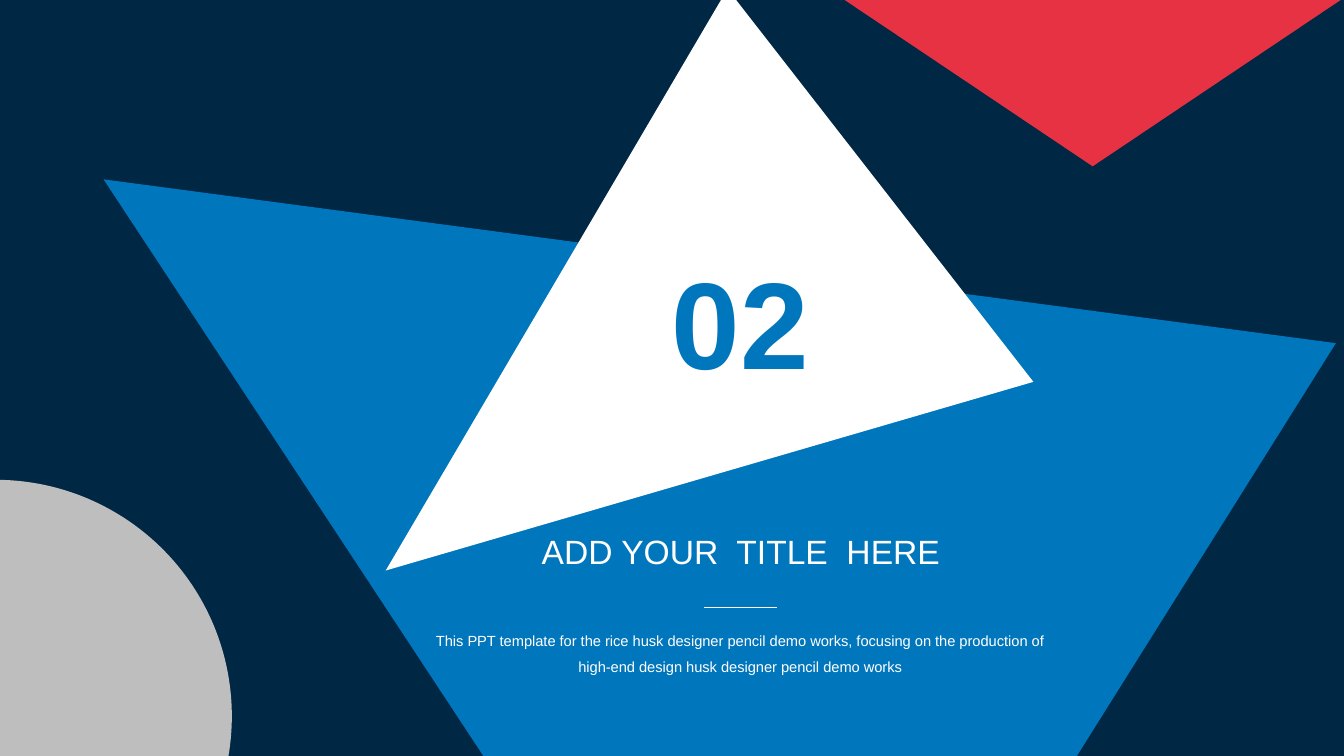
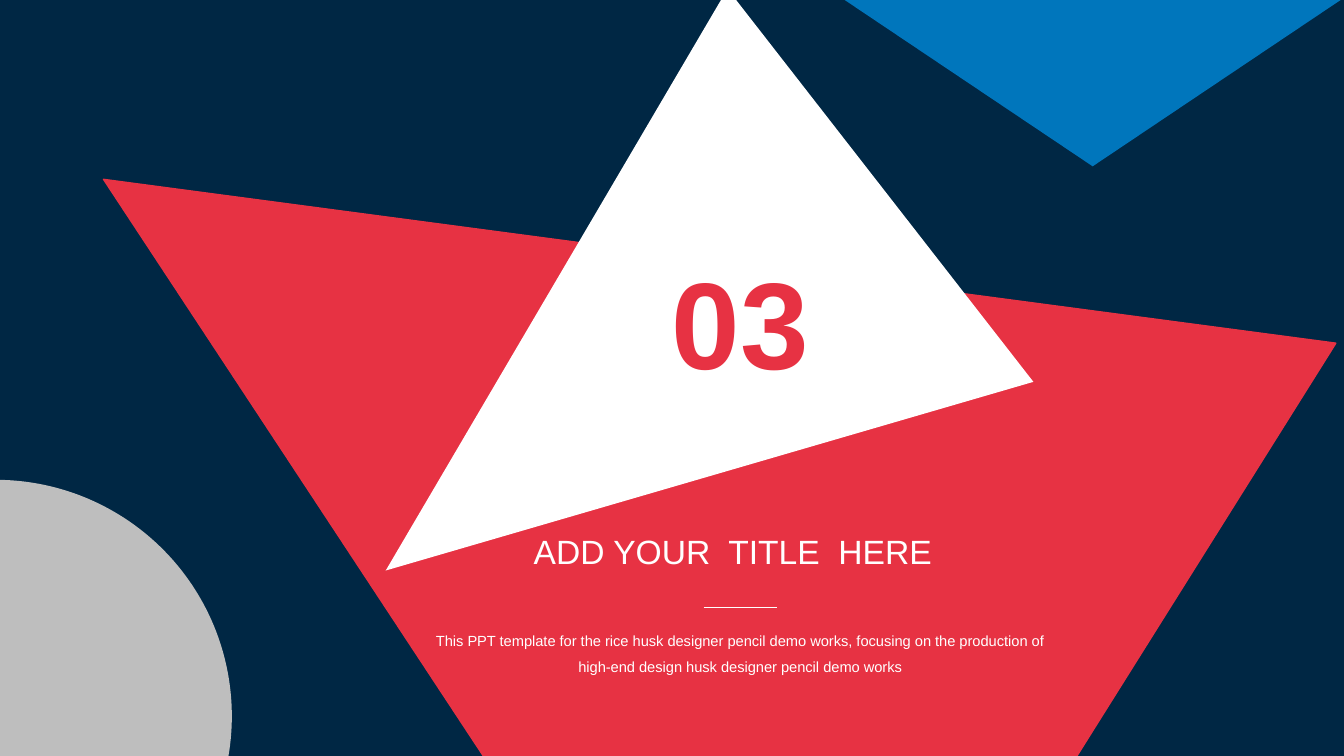
"""Build two section divider slides with a shared arrangement of triangles."""
from dataclasses import dataclass

from lxml.etree import SubElement
from pptx import Presentation
from pptx.dml.color import RGBColor
from pptx.enum.shapes import MSO_CONNECTOR, MSO_SHAPE
from pptx.enum.text import MSO_ANCHOR, MSO_AUTO_SIZE, PP_ALIGN
from pptx.oxml.ns import qn
from pptx.shapes.base import BaseShape
from pptx.slide import Slide
from pptx.util import Inches, Pt

NAVY = RGBColor(0x00, 0x27, 0x44)
BLUE = RGBColor(0x00, 0x76, 0xBC)
RED = RGBColor(0xE7, 0x32, 0x43)
GRAY = RGBColor(0xBE, 0xBE, 0xBE)
WHITE = RGBColor(0xFF, 0xFF, 0xFF)

FONT = "Arial"
SLIDE_WIDTH = Inches(40 / 3)
SLIDE_HEIGHT = Inches(7.5)
SECTION_LAYOUT = 2

TITLE = "ADD YOUR  TITLE  HERE"
DESCRIPTION = (
    "This PPT template for the rice husk designer pencil demo works, "
    "focusing on the production of high-end design husk designer pencil demo works"
)


@dataclass(frozen=True)
class Box:
    """Position and size in percent of the slide's width and height."""

    left: float
    top: float
    width: float
    height: float

    def lengths(self) -> tuple[int, int, int, int]:
        """Return left, top, width and height as slide lengths."""
        return (
            across(self.left),
            down(self.top),
            across(self.width),
            down(self.height),
        )


@dataclass(frozen=True)
class Figure:
    """A flat decorative shape."""

    kind: MSO_SHAPE
    box: Box
    color: RGBColor
    rotation: float = 0
    outline: float = 0


@dataclass(frozen=True)
class TextStyle:
    """Formatting of one centred paragraph."""

    size: float
    color: RGBColor = WHITE
    bold: bool = False
    line_spacing: float = 1.0


@dataclass(frozen=True)
class Section:
    """What differs between the divider slides."""

    number: str
    main_color: RGBColor
    corner_color: RGBColor
    title_left: float
    outline: float = 0


LARGE_TRIANGLE_BOX = Box(4.95, -11.33, 76.8, 149.6)
CORNER_BOX = Box(62.85, 0, 36.9, 22)
DISC_BOX = Box(-17.93, 63.47, 35.18, 62.53)
WHITE_TRIANGLE_BOX = Box(28.58, 8.53, 37.05, 82.93)
NUMBER_BOX = Box(41.25, 31.87, 27.68, 21.07)
DESCRIPTION_BOX = Box(30.9, 81.73, 48.38, 8)
RULE_LEFT, RULE_RIGHT, RULE_TOP = 52.35, 57.83, 80.4

TITLE_STYLE = TextStyle(24)
DESCRIPTION_STYLE = TextStyle(10.5, line_spacing=1.5)

SECTIONS = (
    Section("02", BLUE, RED, title_left=38.7),
    Section("03", RED, BLUE, title_left=38.1, outline=1),
)


def across(percent: float) -> int:
    """Convert a percentage of the slide's width to a length."""
    return round(SLIDE_WIDTH * percent / 100)


def down(percent: float) -> int:
    """Convert a percentage of the slide's height to a length."""
    return round(SLIDE_HEIGHT * percent / 100)


def add_figure(slide: Slide, figure: Figure) -> None:
    """Draw one flat shape."""
    shape = slide.shapes.add_shape(figure.kind, *figure.box.lengths())
    shape.rotation = figure.rotation
    shape.shadow.inherit = False
    shape.fill.solid()
    shape.fill.fore_color.rgb = figure.color
    if figure.outline:
        shape.line.color.rgb = figure.color
        shape.line.width = Pt(figure.outline)
    else:
        shape.line.fill.background()


def add_rule(slide: Slide) -> None:
    """Draw the thin line between title and description."""
    rule = slide.shapes.add_connector(
        MSO_CONNECTOR.STRAIGHT,
        across(RULE_LEFT),
        down(RULE_TOP),
        across(RULE_RIGHT),
        down(RULE_TOP),
    )
    rule.line.color.rgb = WHITE
    rule.line.width = Pt(0.5)
    SubElement(rule.element.spPr, qn("a:effectLst"))


def write_text(shape: BaseShape, box: Box, text: str, style: TextStyle) -> None:
    """Place a text shape and fill it with one centred paragraph."""
    shape.left, shape.top, shape.width, shape.height = box.lengths()
    frame = shape.text_frame
    frame.text = text
    frame.word_wrap = True
    frame.auto_size = MSO_AUTO_SIZE.NONE
    frame.vertical_anchor = MSO_ANCHOR.TOP
    paragraph = frame.paragraphs[0]
    paragraph.alignment = PP_ALIGN.CENTER
    paragraph.line_spacing = style.line_spacing
    paragraph.space_before = Pt(0)
    paragraph.font.name = FONT
    paragraph.font.size = Pt(style.size)
    paragraph.font.bold = style.bold
    paragraph.font.color.rgb = style.color


def add_section_slide(presentation: Presentation, section: Section) -> None:
    """Add one divider slide."""
    slide = presentation.slides.add_slide(presentation.slide_layouts[SECTION_LAYOUT])
    title, description = slide.placeholders
    triangle = MSO_SHAPE.ISOSCELES_TRIANGLE
    figures = (
        Figure(triangle, LARGE_TRIANGLE_BOX, section.main_color, 302.1, section.outline),
        Figure(triangle, CORNER_BOX, section.corner_color, 180),
        Figure(MSO_SHAPE.OVAL, DISC_BOX, GRAY),
        Figure(triangle, WHITE_TRIANGLE_BOX, WHITE, 232.1),
    )
    for figure in figures:
        add_figure(slide, figure)

    number = slide.shapes.add_textbox(*NUMBER_BOX.lengths())
    number_style = TextStyle(88, section.main_color, bold=True)
    write_text(number, NUMBER_BOX, section.number, number_style)
    add_rule(slide)

    title_box = Box(section.title_left, 69.6, 32.85, 6.67)
    write_text(title, title_box, TITLE, TITLE_STYLE)
    write_text(description, DESCRIPTION_BOX, DESCRIPTION, DESCRIPTION_STYLE)
    for placeholder in (description, title):
        slide.shapes.element.append(placeholder.element)


def main() -> None:
    """Build and save the presentation."""
    presentation = Presentation()
    presentation.slide_width = SLIDE_WIDTH
    presentation.slide_height = SLIDE_HEIGHT
    background = presentation.slide_master.background.fill
    background.solid()
    background.fore_color.rgb = NAVY
    for section in SECTIONS:
        add_section_slide(presentation, section)
    presentation.save("out.pptx")


if __name__ == "__main__":
    main()
